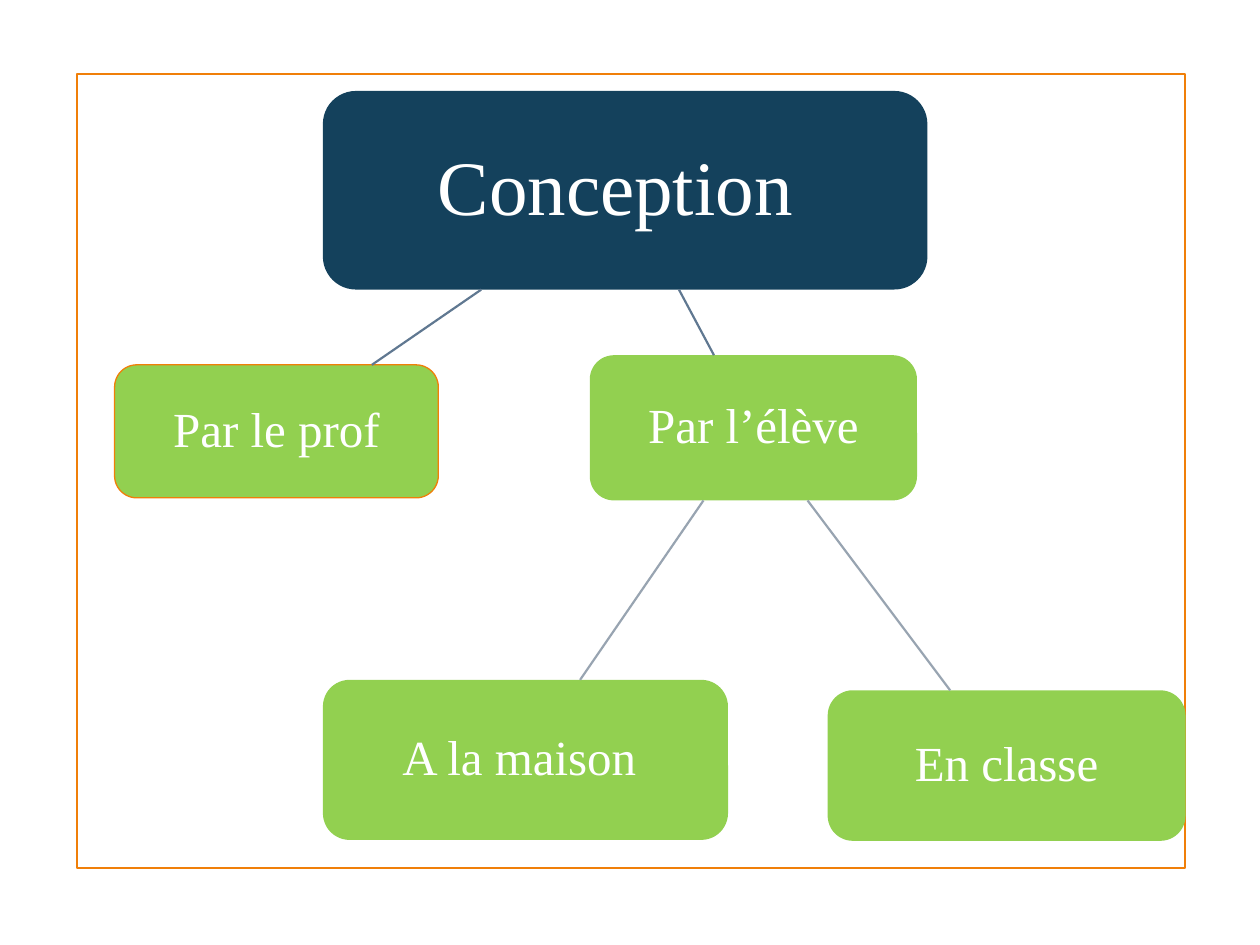
from lxml.etree import SubElement
from pptx import Presentation
from pptx.dml.color import RGBColor
from pptx.enum.shapes import MSO_CONNECTOR, MSO_SHAPE
from pptx.enum.text import MSO_ANCHOR, PP_ALIGN
from pptx.oxml.ns import qn
from pptx.util import Pt

NAVY = RGBColor(0x14, 0x41, 0x5C)
GREEN = RGBColor(0x92, 0xD0, 0x50)
ORANGE = RGBColor(0xF0, 0x7F, 0x09)
SLATE = RGBColor(0x60, 0x78, 0x91)
GREY = RGBColor(0x98, 0xA4, 0xB1)
WHITE = RGBColor(0xFF, 0xFF, 0xFF)


class TreePage:
    """Holds the text style and the page being drawn."""

    font_name = "Times New Roman"
    line_width = 1.25

    def __init__(self, page):
        self.page = page

    def shape(self, kind, bounds, fill=None, line=None, width=line_width):
        shape = self.page.shapes.add_shape(kind, *map(Pt, bounds))
        shape.shadow.inherit = False
        if fill is None:
            shape.fill.background()
        else:
            shape.fill.solid()
            shape.fill.fore_color.rgb = fill
        if line is None:
            shape.line.fill.background()
        else:
            shape.line.color.rgb = line
            shape.line.width = Pt(width)
        return shape

    def frame(self, bounds, color):
        return self.shape(MSO_SHAPE.RECTANGLE, bounds, line=color)

    def node(self, text, bounds, fill=GREEN, size=28, inset=6, line=None):
        box = self.shape(MSO_SHAPE.ROUNDED_RECTANGLE, bounds, fill, line, 0.75)
        text_frame = box.text_frame
        text_frame.text = text
        text_frame.word_wrap = True
        text_frame.vertical_anchor = MSO_ANCHOR.MIDDLE
        text_frame.margin_left = text_frame.margin_right = Pt(inset)
        text_frame.margin_top = text_frame.margin_bottom = Pt(inset)
        para = text_frame.paragraphs[0]
        para.alignment = PP_ALIGN.CENTER
        para.line_spacing = 0.9
        for span in para.runs:
            span.font.name = self.font_name
            span.font.size = Pt(size)
            span.font.color.rgb = WHITE
        return box

    def branch(self, parent, child, start_x, end_x, color):
        """Joins the bottom edge of parent to the top edge of child."""
        link = self.page.shapes.add_connector(
            MSO_CONNECTOR.STRAIGHT,
            Pt(start_x), parent.top + parent.height, Pt(end_x), child.top)
        link.line.color.rgb = color
        link.line.width = Pt(self.line_width)
        SubElement(link._element.spPr, qn("a:effectLst"))


def main():
    deck = Presentation()
    deck.slide_width, deck.slide_height = Pt(720), Pt(540)
    tree = TreePage(deck.slides.add_slide(deck.slide_layouts[6]))

    # Border of the page
    tree.frame((44, 42.5, 633, 453.5), ORANGE)

    # Nodes, from the root down
    root = tree.node("Conception ", (184.5, 52, 345.5, 113.5), NAVY, 44, 14)
    teacher = tree.node("Par le prof", (65.5, 208.5, 185, 76), line=ORANGE)
    pupil = tree.node("Par l’élève", (337, 203, 187, 83))
    classroom = tree.node("En classe", (473, 394.5, 204.5, 86))
    home = tree.node("A la maison ", (184.5, 388.5, 231.5, 91.5))

    # Branches between the levels
    tree.branch(root, teacher, 275, 212.5, SLATE)
    tree.branch(root, pupil, 388, 408, SLATE)
    tree.branch(pupil, home, 402, 331.5, GREY)
    tree.branch(pupil, classroom, 461.5, 543, GREY)

    deck.save("out.pptx")


if __name__ == "__main__":
    main()
